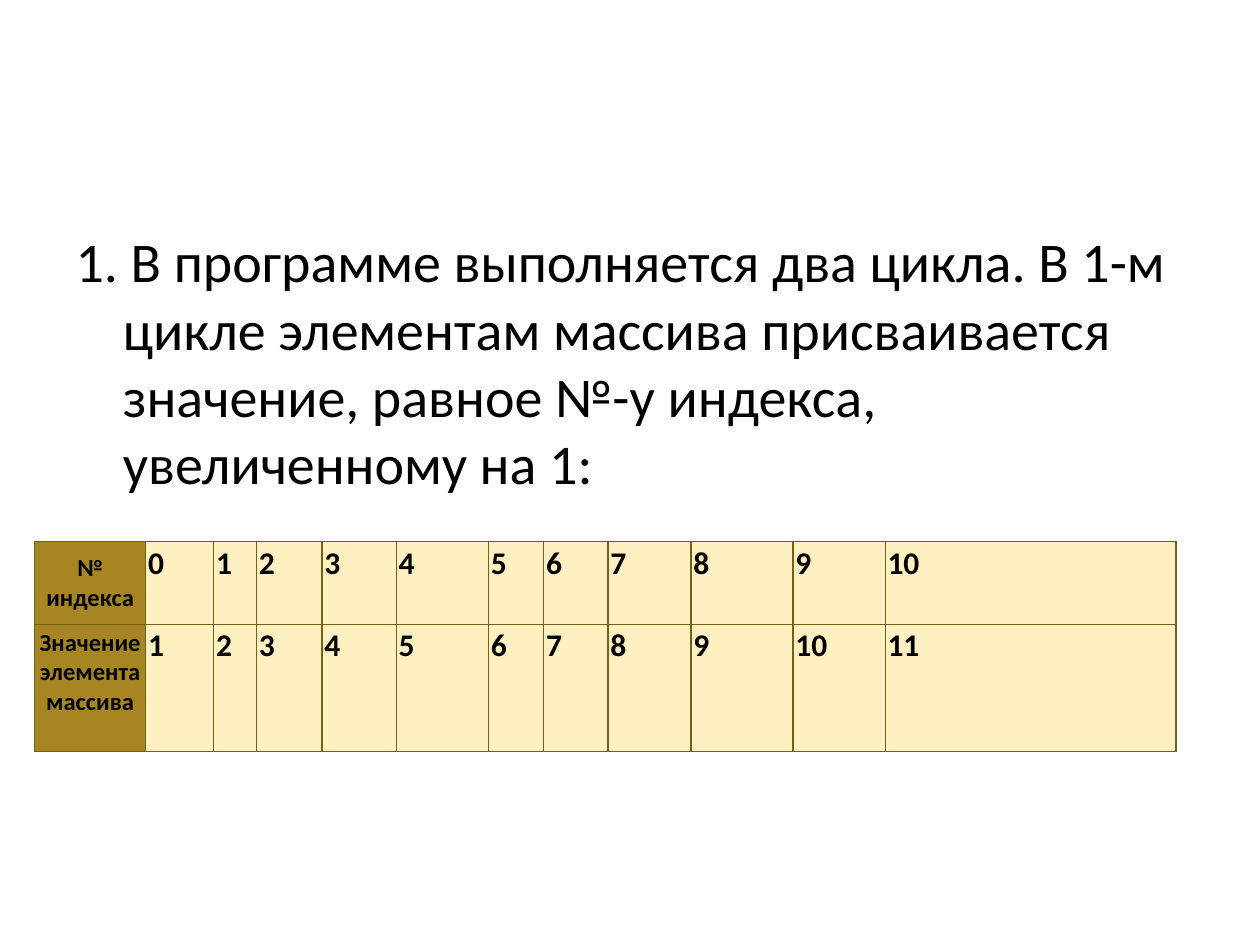
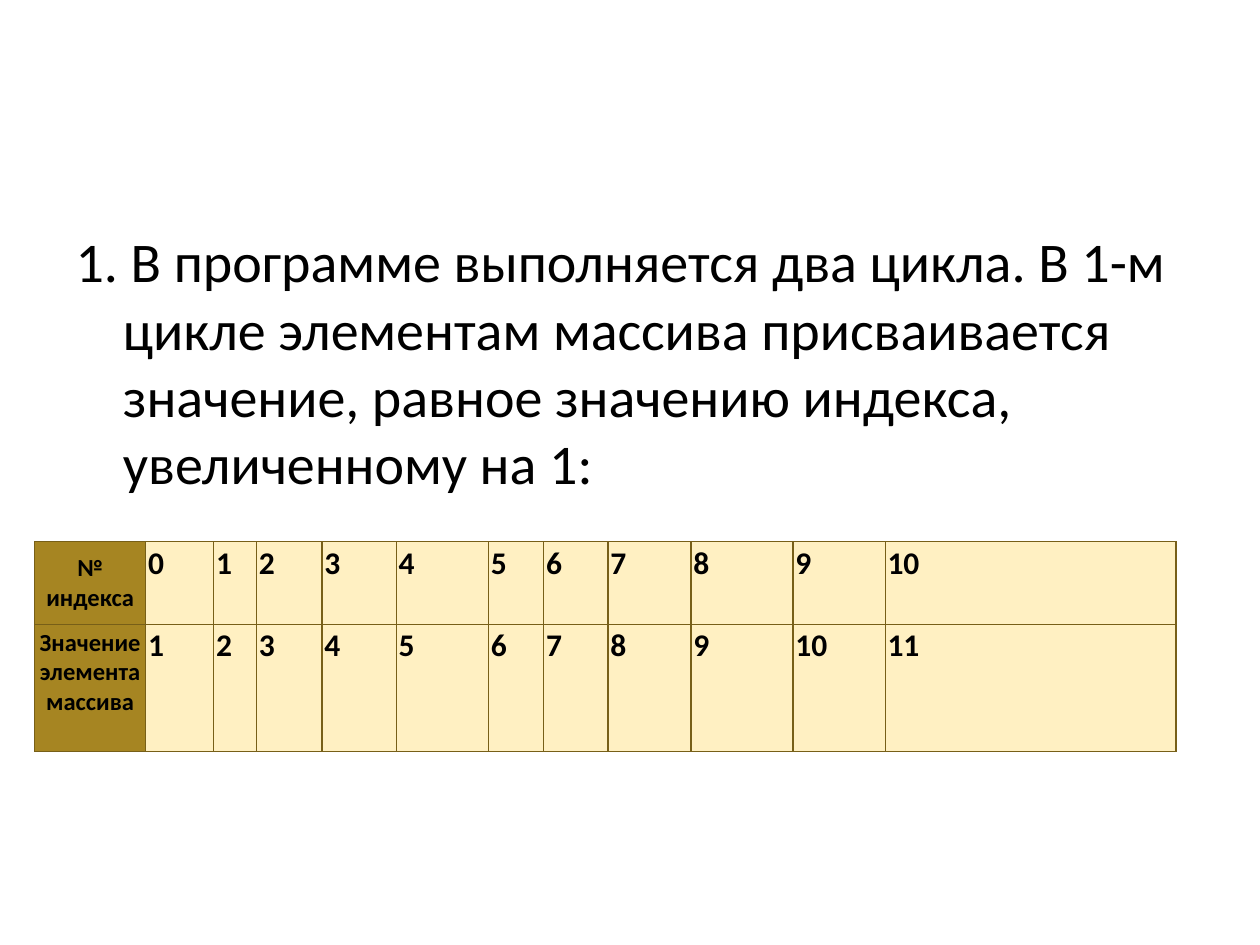
from lxml import etree
from pptx import Presentation
from pptx.dml.color import RGBColor
from pptx.enum import text as t
from pptx.oxml import ns
from pptx.util import Pt

INK = RGBColor(0x00, 0x00, 0x00)
HEADER_FILL = RGBColor(0xA6, 0x85, 0x22)
VALUE_FILL = RGBColor(0xFF, 0xF0, 0xC2)
GRID_LINE = RGBColor(0x77, 0x5F, 0x18)
FONT = "Calibri"
CONTENT_LAYOUT = 1

COLUMN_WIDTHS = [63.4, 38.9, 24.5, 37.4, 42.5, 52.6, 31.7, 36.7, 47.5, 58.3, 52.6, 166.3]
ROW_HEIGHTS = [47.2, 72.4]
STATEMENT = ("1. В программе выполняется два цикла. В 1-м цикле элементам массива "
             "присваивается значение, равное {} индекса, увеличенному на 1:")
INDEX_WORDINGS = ["№-у", "значению"]


def write(frame, content, size, bold=False, align=t.PP_ALIGN.LEFT, before=0):
    frame.text = content
    for paragraph in frame.paragraphs:
        paragraph.alignment = align
        paragraph.space_before = Pt(before)
        font = paragraph.font
        for run in paragraph.runs:
            font = run.font
            font.name, font.size, font.bold = FONT, Pt(size), bold
            font.color.rgb = INK


def add_cell_borders(table_frame, color, width):
    for tc in table_frame.element.iter(ns.qn("a:tc")):
        properties = tc.get_or_add_tcPr()
        for position, side in enumerate(("lnL", "lnR", "lnT", "lnB")):
            line = etree.Element(ns.qn(f"a:{side}"), w=str(Pt(width)))
            fill = etree.SubElement(line, ns.qn("a:solidFill"))
            etree.SubElement(fill, ns.qn("a:srgbClr"), val=str(color))
            properties.insert(position, line)


class Deck:
    def __init__(self):
        self.presentation = Presentation()
        self.presentation.slide_width = Pt(720)
        self.presentation.slide_height = Pt(540)
        self.slide = None

    def new_slide(self):
        layout = self.presentation.slide_layouts[CONTENT_LAYOUT]
        self.slide = self.presentation.slides.add_slide(layout)
        title = self.slide.shapes.title.element
        title.getparent().remove(title)

    def statement(self, content):
        body = self.slide.placeholders[1]
        body.left, body.top, body.width, body.height = Pt(36), Pt(126), Pt(648), Pt(356.4)
        write(body.text_frame, content, size=32, before=6.4)
        for properties in body.element.iter(ns.qn("a:pPr")):
            properties.set("marL", str(Pt(27)))
            properties.set("indent", str(Pt(-27)))
            etree.SubElement(properties, ns.qn("a:buNone"))

    def cell(self, cell, content, header=False):
        margin = Pt(2 if header else 1.4)
        cell.margin_left = cell.margin_right = margin
        cell.margin_top = cell.margin_bottom = margin
        cell.fill.solid()
        cell.fill.fore_color.rgb = HEADER_FILL if header else VALUE_FILL
        write(cell.text_frame, content, size=14 if header else 18, bold=True,
              align=t.PP_ALIGN.CENTER if header else t.PP_ALIGN.LEFT)

    def array_table(self, rows):
        frame = self.slide.shapes.add_table(
            len(rows), len(COLUMN_WIDTHS), Pt(19.8), Pt(309.6),
            Pt(sum(COLUMN_WIDTHS)), Pt(sum(ROW_HEIGHTS)))
        table = frame.table
        table.first_row = table.horz_banding = False
        for column, width in zip(table.columns, COLUMN_WIDTHS):
            column.width = Pt(width)
        for row, height, contents in zip(table.rows, ROW_HEIGHTS, rows):
            row.height = Pt(height)
            for number, (cell, content) in enumerate(zip(row.cells, contents)):
                self.cell(cell, str(content), header=number == 0)
        table.cell(0, 0).vertical_anchor = t.MSO_ANCHOR.MIDDLE
        add_cell_borders(frame, GRID_LINE, 0.75)


def main():
    deck = Deck()
    indexes = range(11)
    array_rows = [
        ["№ индекса", *indexes],
        ["Значение элемента\nмассива", *(index + 1 for index in indexes)],
    ]
    for wording in INDEX_WORDINGS:
        deck.new_slide()
        deck.statement(STATEMENT.format(wording))
        deck.array_table(array_rows)
    deck.presentation.save("out.pptx")


if __name__ == "__main__":
    main()
